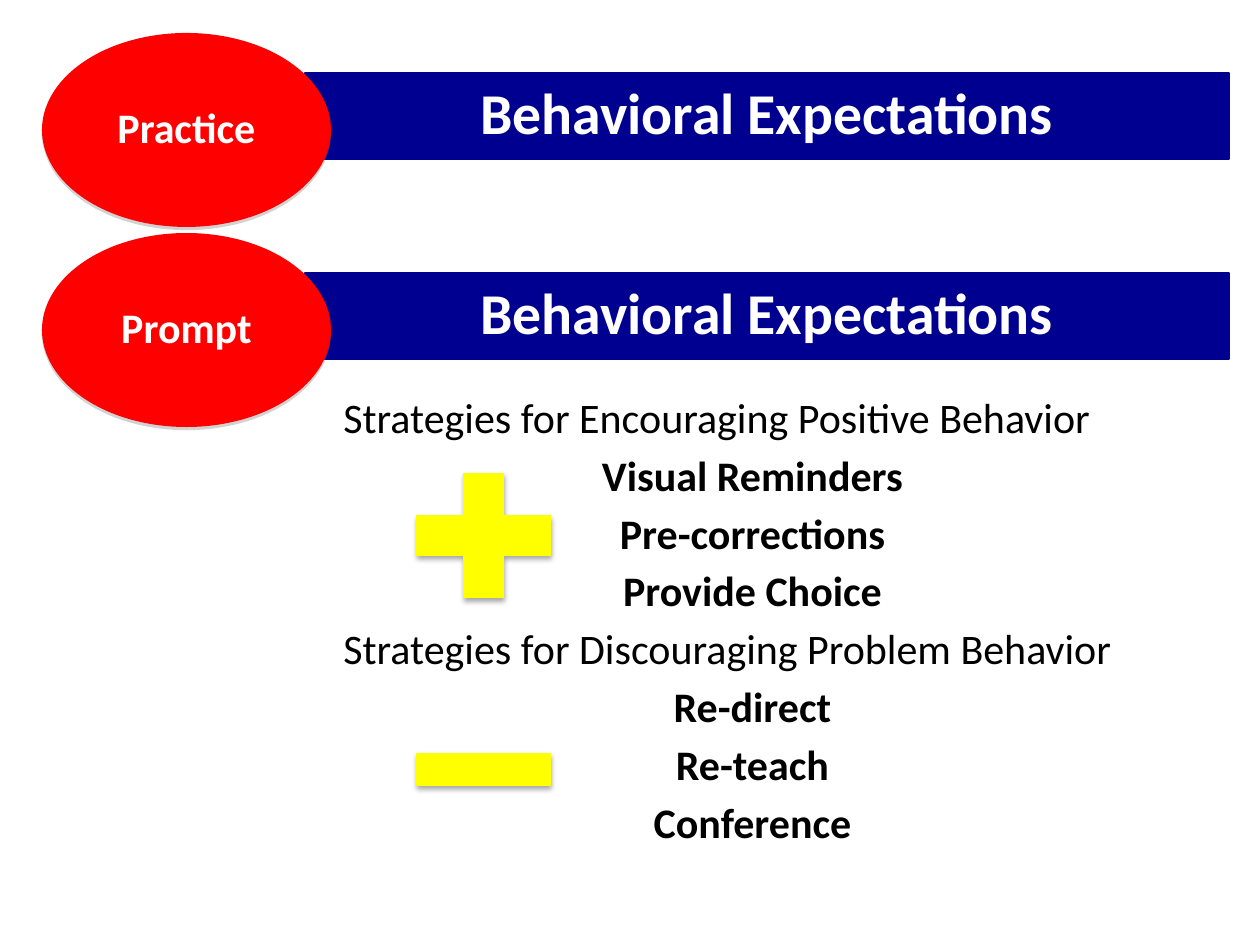
from lxml import etree
from pptx import Presentation
from pptx.dml.color import RGBColor
from pptx.enum.shapes import MSO_SHAPE
from pptx.enum.text import MSO_ANCHOR, PP_ALIGN
from pptx.oxml.ns import qn
from pptx.util import Pt

# Content
TITLE = "Behavioral Expectations"
STEPS = ["Practice", "Prompt"]
PLANS = [
    ("Strategies for Encouraging Positive Behavior",
     ["Visual Reminders", "Pre-corrections", "Provide Choice"]),
    ("Strategies for Discouraging Problem Behavior",
     ["Re-direct", "Re-teach", "Conference"]),
]

COLORS = {"bar": "000090", "oval": "FF0000", "sign": "FFFF00",
          "light": "FFFFFF", "dark": "000000", "shade": "808080"}
FONT = "Calibri"
RECT, OVAL = MSO_SHAPE.RECTANGLE, MSO_SHAPE.OVAL
PLUS, MINUS = MSO_SHAPE.MATH_PLUS, MSO_SHAPE.MATH_MINUS
LEFT, CENTER = PP_ALIGN.LEFT, PP_ALIGN.CENTER
MIDDLE = MSO_ANCHOR.MIDDLE

# Layout in px
PX = 914400 / 126
TOP, PITCH = 33, 200
SIGNS = [(PLUS, (393, 451, 182, 169)), (MINUS, (393, 703, 182, 133))]


def emu(*nums):
    return [round(n * PX) for n in nums]


def rgb(name):
    return RGBColor.from_string(COLORS[name])


def style(para, size, color, bold=True, align=CENTER):
    para.alignment = align
    font = para.font
    font.name, font.size, font.bold = FONT, Pt(size), bold
    font.color.rgb = rgb(color)


def add_shape(kind, box, color, line=True):
    shape = slide.shapes.add_shape(kind, *emu(*box))
    shape.shadow.inherit = False
    shape.fill.solid()
    shape.fill.fore_color.rgb = rgb(color)
    if line:
        shape.line.color.rgb = rgb(color)
        shape.line.width = Pt(0.75)
    else:
        shape.line.fill.background()
    return shape


def add_shadow(shape, color, blur):
    effects = shape._element.spPr.find(qn("a:effectLst"))
    outer = etree.SubElement(effects, qn("a:outerShdw"), blurRad=str(Pt(blur)),
                             dist=str(Pt(1.8)), dir="5400000", rotWithShape="0")
    tone = etree.SubElement(outer, qn("a:srgbClr"), val=COLORS[color])
    etree.SubElement(tone, qn("a:alpha"), val="35000")


def label(shape, text, size):
    frame = shape.text_frame
    frame.word_wrap, frame.vertical_anchor = True, MIDDLE
    para = frame.paragraphs[0]
    para.text, para.line_spacing = text, 0.9
    style(para, size, "light")
    return frame


prs = Presentation()
prs.slide_width, prs.slide_height = emu(1260, 945)
slide = prs.slides.add_slide(prs.slide_layouts[6])

# Steps: a title bar with an oval over its left end
for i, step in enumerate(STEPS):
    y = TOP + i * PITCH
    label(add_shape(RECT, (305, y + 40, 924, 86), "bar"), TITLE, 33)
    oval = add_shape(OVAL, (42, y, 289, 194), "oval", line=False)
    add_shadow(oval, "shade", 0)
    frame = label(oval, step, 24)
    frame.margin_left = frame.margin_right = Pt(2)
    frame.margin_top = frame.margin_bottom = Pt(2)

# Strategies
frame = slide.shapes.add_textbox(*emu(331, 385, 843, 466)).text_frame
frame.word_wrap = True
rows = []
for head, items in PLANS:
    rows += [(head, False, LEFT)] + [(item, True, CENTER) for item in items]
for i, (text, bold, align) in enumerate(rows):
    para = frame.add_paragraph() if i else frame.paragraphs[0]
    para.text = text
    props = para._p.get_or_add_pPr()
    props.set("marL", "342900")
    props.set("indent", "-342900")
    if i:
        para.space_before = Pt(4.3)
    style(para, 24, "dark", bold, align)

# Plus and minus signs
for kind, box in SIGNS:
    add_shadow(add_shape(kind, box, "sign"), "dark", 3.1)

prs.save("out.pptx")
